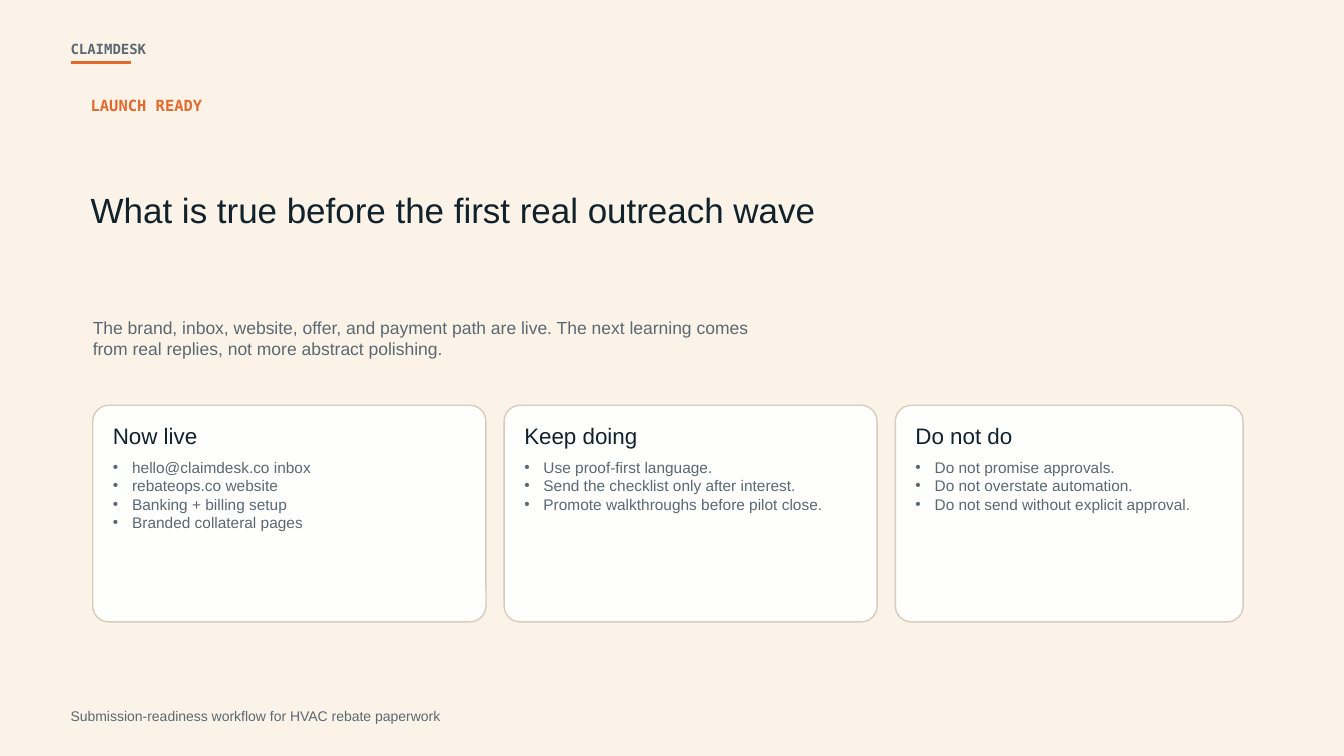
from lxml import etree
from pptx import Presentation
from pptx.dml.color import RGBColor
from pptx.enum.shapes import MSO_CONNECTOR, MSO_SHAPE
from pptx.enum.text import MSO_ANCHOR, MSO_AUTO_SIZE, PP_ALIGN
from pptx.oxml.ns import qn
from pptx.util import Inches, Pt

LEFT = PP_ALIGN.LEFT
TOP, MIDDLE = MSO_ANCHOR.TOP, MSO_ANCHOR.MIDDLE
NO_FIT = MSO_AUTO_SIZE.NONE
ROUNDED = MSO_SHAPE.ROUNDED_RECTANGLE
STRAIGHT = MSO_CONNECTOR.STRAIGHT

CREAM, WHITE, SAND = "FBF3E8", "FFFFFF", "D7CCBE"
INK, SLATE, ORANGE = "11222C", "5B6872", "E36A2F"
SANS, MONO = "Arial", "DejaVu Sans Mono"

TITLE = "What is true before the first real outreach wave"
SUMMARY = ("The brand, inbox, website, offer, and payment path are live. "
           "The next learning comes from real replies, not more abstract polishing.")
BRAND = "CLAIMDESK"
EYEBROW = "LAUNCH READY"
FOOTER = "Submission-readiness workflow for HVAC rebate paperwork"
CARDS = [
    ("Now live", 3.9, [
        "hello@claimdesk.co inbox",
        "rebateops.co website",
        "Banking + billing setup",
        "Branded collateral pages",
    ]),
    ("Keep doing", 3.7, [
        "Use proof-first language.",
        "Send the checklist only after interest.",
        "Promote walkthroughs before pilot close.",
    ]),
    ("Do not do", 3.45, [
        "Do not promise approvals.",
        "Do not overstate automation.",
        "Do not send without explicit approval.",
    ]),
]

MARGIN = 0.7
CARD_LEFT, CARD_TOP, CARD_HEIGHT, CARD_GAP = 0.92, 4.02, 2.15, 0.18
CARD_PAD = 0.2
BULLET_INDENT = 0.19


def rgb(color):
    return RGBColor.from_string(color)


def add_bullet(p):
    pPr = p._p.get_or_add_pPr()
    pPr.set("marL", str(Inches(BULLET_INDENT)))
    pPr.set("indent", str(-Inches(BULLET_INDENT)))
    etree.SubElement(pPr, qn("a:buChar"), char="•")


def fill_text(sp, box, lines, size, color, font=SANS, bold=False,
              anchor=MIDDLE, bullets=False):
    """Place a text shape on the slide and write its paragraphs."""
    sp.left, sp.top, sp.width, sp.height = [Inches(v) for v in box]
    tf = sp.text_frame
    frame = {"word_wrap": True, "auto_size": NO_FIT, "vertical_anchor": anchor,
             "margin_left": 0, "margin_top": 0, "margin_right": 0, "margin_bottom": 0}
    for name, value in frame.items():
        setattr(tf, name, value)
    for i, line in enumerate(lines):
        p = tf.add_paragraph() if i else tf.paragraphs[0]
        if bullets:
            add_bullet(p)
        p.alignment, p.space_before = LEFT, Pt(0)
        r = p.add_run()
        r.text = line
        for name, value in {"name": font, "size": Pt(size), "bold": bold}.items():
            setattr(r.font, name, value)
        r.font.color.rgb = rgb(color)


def add_label(s, box, text, *style, **options):
    fill_text(s.shapes.add_textbox(0, 0, 0, 0), box, [text], *style, **options)


def add_panel(s, x, width):
    box = [Inches(v) for v in (x, CARD_TOP, width, CARD_HEIGHT)]
    sp = s.shapes.add_shape(ROUNDED, *box)
    sp.adjustments[0] = 0.074
    sp.shadow.inherit = False
    sp.fill.solid()
    sp.fill.fore_color.rgb = rgb(WHITE)
    white = sp.element.spPr.find(qn("a:solidFill"))[0]
    etree.SubElement(white, qn("a:alpha"), val="94000")
    sp.line.color.rgb = rgb(SAND)
    sp.line.width = Pt(1)


def add_card(s, body, x, heading, width, items):
    add_panel(s, x, width)
    text_x, text_width = x + CARD_PAD, width - 2 * CARD_PAD
    add_label(s, (text_x, CARD_TOP + 0.16, text_width, 0.28), heading, 16, INK)
    s.shapes.element.append(body.element)  # bring the list in front of its panel
    fill_text(body, (text_x, CARD_TOP + 0.52, text_width - 0.05, 1.45), items,
              11, SLATE, anchor=TOP, bullets=True)


def add_brand_rule(s):
    y = Inches(0.62)
    rule = s.shapes.add_connector(STRAIGHT, Inches(MARGIN), y, Inches(MARGIN + 0.6), y)
    rule.line.color.rgb = rgb(ORANGE)
    rule.line.width = Pt(2.5)
    etree.SubElement(rule.element.spPr, qn("a:effectLst"))


def main():
    prs = Presentation()
    prs.slide_width, prs.slide_height = Inches(13.33), Inches(7.5)
    s = prs.slides.add_slide(prs.slide_layouts.get_by_name("Comparison"))
    s.background.fill.solid()
    s.background.fill.fore_color.rgb = rgb(CREAM)
    title, summary, *lists = s.placeholders

    add_brand_rule(s)
    add_label(s, (MARGIN, 0.36, 2.2, 0.25), BRAND, 10, SLATE, font=MONO, bold=True)
    add_label(s, (MARGIN, 7, 4.8, 0.2), FOOTER, 10, SLATE)
    add_label(s, (0.9, 0.95, 4, 0.2), EYEBROW, 11, ORANGE, font=MONO, bold=True)
    fill_text(title, (0.9, 1.28, 7.4, 1.6), [TITLE], 25, INK)
    fill_text(summary, (CARD_LEFT, 2.95, 6.8, 0.8), [SUMMARY], 12.5, SLATE)

    x = CARD_LEFT
    for body, (heading, width, items) in zip(lists, CARDS):
        add_card(s, body, x, heading, width, items)
        x += width + CARD_GAP
    prs.save("out.pptx")


if __name__ == "__main__":
    main()
